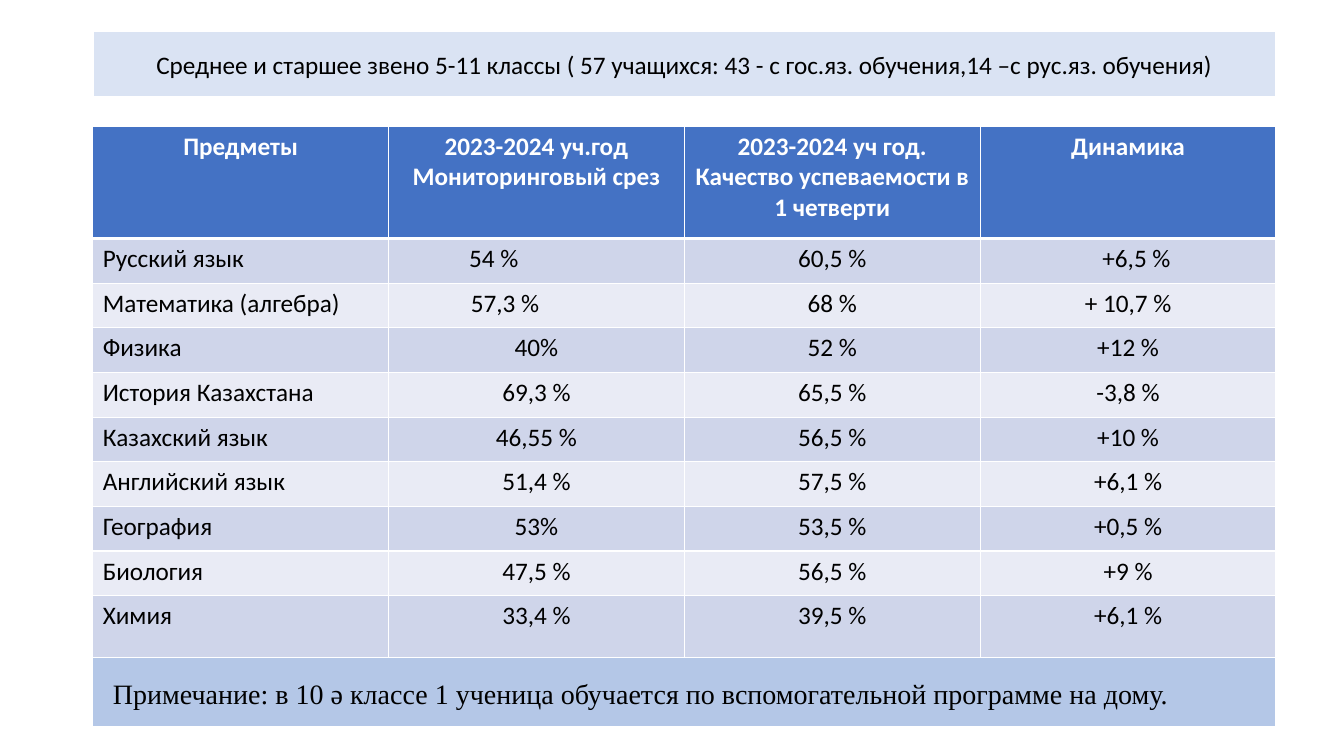
from dataclasses import dataclass

from lxml.etree import SubElement
from pptx import Presentation
from pptx.dml.color import RGBColor
from pptx.enum.shapes import MSO_SHAPE
from pptx.enum.text import MSO_ANCHOR, PP_ALIGN
from pptx.oxml.ns import qn
from pptx.slide import Slide
from pptx.table import _Cell
from pptx.text.text import TextFrame
from pptx.util import Pt

COLORS = {
    "white": "FFFFFF",
    "black": "000000",
    "title": "DAE3F3",
    "header": "4472C4",
    "odd": "CFD5EA",
    "even": "E9EBF5",
    "note": "B4C7E7",
}
LEFT, WIDTH = 66.24, 845.28
TABLE_TOP = 90
HEADER_HEIGHT, ROW_HEIGHT, LAST_HEIGHT = 80.4, 31.9, 44
CELL_MARGIN = 7.2


@dataclass
class Banner:
    text: str
    top: float
    height: float
    fill: str
    border: float
    font: str
    size: float
    align: PP_ALIGN
    margin: float = 7.2
    line_spacing: float = 1.0
    space_after: float = 0


@dataclass
class Subject:
    name: str
    survey: str
    quarter: str
    change: str
    survey_right: float = 0
    change_left: float = 0


BANNERS = [
    Banner("Среднее и старшее звено 5-11 классы ( 57 учащихся: 43 - с гос.яз. обучения,14 –с рус.яз. обучения)",
           22.3, 46.8, "title", 1.5, "Calibri", 18, PP_ALIGN.CENTER),
    Banner("Примечание: в 10 ә классе 1 ученица обучается по вспомогательной программе на дому.",
           469.5, 49.7, "note", 1, "Times New Roman", 20, PP_ALIGN.LEFT, 14.4, 1.07, 8),
]
HEADINGS = [
    "Предметы",
    "2023-2024 уч.год\nМониторинговый срез",
    "2023-2024 уч год.\nКачество успеваемости в 1 четверти",
    "Динамика",
]
SUBJECTS = [
    Subject("Русский язык", "54 %", "60,5 %", "+6,5 %", survey_right=61, change_left=12),
    Subject("Математика (алгебра)", "57,3 %", "68 %", "+ 10,7 %", survey_right=45),
    Subject("Физика", "40%", "52 %", "+12 %"),
    Subject("История Казахстана", "69,3 %", "65,5 %", "-3,8 %"),
    Subject("Казахский язык", "46,55 %", "56,5 %", "+10 %"),
    Subject("Английский язык", "51,4 %", "57,5 %", "+6,1 %"),
    Subject("География", "53%", "53,5 %", "+0,5 %"),
    Subject("Биология", "47,5 %", "56,5 %", "+9 %"),
    Subject("Химия", "33,4 %", "39,5 %", "+6,1 %"),
]


def color(name: str) -> RGBColor:
    return RGBColor.from_string(COLORS[name])


def style_text(frame: TextFrame, font: str, size: float, ink: str,
               align: PP_ALIGN, bold: bool = False) -> None:
    for para in frame.paragraphs:
        para.alignment = align
        for span in para.runs:
            span.font.name = font
            span.font.size = Pt(size)
            span.font.bold = bold
            span.font.color.rgb = color(ink)


def add_banner(page: Slide, banner: Banner) -> None:
    box = page.shapes.add_shape(MSO_SHAPE.RECTANGLE, Pt(LEFT), Pt(banner.top),
                                Pt(WIDTH), Pt(banner.height))
    box.shadow.inherit = False
    box.fill.solid()
    box.fill.fore_color.rgb = color(banner.fill)
    box.line.color.rgb = color("white")
    box.line.width = Pt(banner.border)
    frame = box.text_frame
    frame.word_wrap = True
    frame.vertical_anchor = MSO_ANCHOR.MIDDLE
    frame.margin_left = Pt(banner.margin)
    frame.text = banner.text
    style_text(frame, banner.font, banner.size, "black", banner.align)
    para = frame.paragraphs[0]
    para.line_spacing = banner.line_spacing
    para.space_after = Pt(banner.space_after)


def set_borders(cell: _Cell, top: float, bottom: float) -> None:
    properties = cell._tc.get_or_add_tcPr()
    for side, width in (("L", 1), ("R", 1), ("T", top), ("B", bottom)):
        line = SubElement(properties, qn(f"a:ln{side}"), w=str(Pt(width)))
        fill = SubElement(line, qn("a:solidFill"))
        SubElement(fill, qn("a:srgbClr"), val=COLORS["white"])


def fill_cell(cell: _Cell, text: str, row: int, column: int) -> None:
    header = row == 0
    set_borders(cell, 3 if row == 1 else 1, 3 if header else 1)
    cell.fill.solid()
    cell.fill.fore_color.rgb = color("header" if header else "odd" if row % 2 else "even")
    cell.text_frame.text = text
    align = PP_ALIGN.CENTER if header or column else PP_ALIGN.LEFT
    style_text(cell.text_frame, "Calibri", 18, "white" if header else "black", align, header)


def add_results(page: Slide) -> None:
    rows = [HEADINGS] + [[item.name, item.survey, item.quarter, item.change] for item in SUBJECTS]
    heights = [HEADER_HEIGHT] + [ROW_HEIGHT] * (len(SUBJECTS) - 1) + [LAST_HEIGHT]
    table = page.shapes.add_table(len(rows), len(HEADINGS), Pt(LEFT), Pt(TABLE_TOP),
                                  Pt(WIDTH), Pt(sum(heights))).table
    for column in table.columns:
        column.width = Pt(WIDTH / len(HEADINGS))
    for row, (texts, height) in enumerate(zip(rows, heights)):
        table.rows[row].height = Pt(height)
        for column, text in enumerate(texts):
            fill_cell(table.cell(row, column), text, row, column)
    for row, item in enumerate(SUBJECTS, start=1):
        table.cell(row, 1).margin_right = Pt(CELL_MARGIN + item.survey_right)
        table.cell(row, 3).margin_left = Pt(CELL_MARGIN + item.change_left)


def main() -> None:
    deck = Presentation()
    deck.slide_width, deck.slide_height = Pt(960), Pt(540)
    page = deck.slides.add_slide(deck.slide_layouts[6])
    add_results(page)
    for banner in BANNERS:
        add_banner(page, banner)
    deck.save("out.pptx")


if __name__ == "__main__":
    main()
